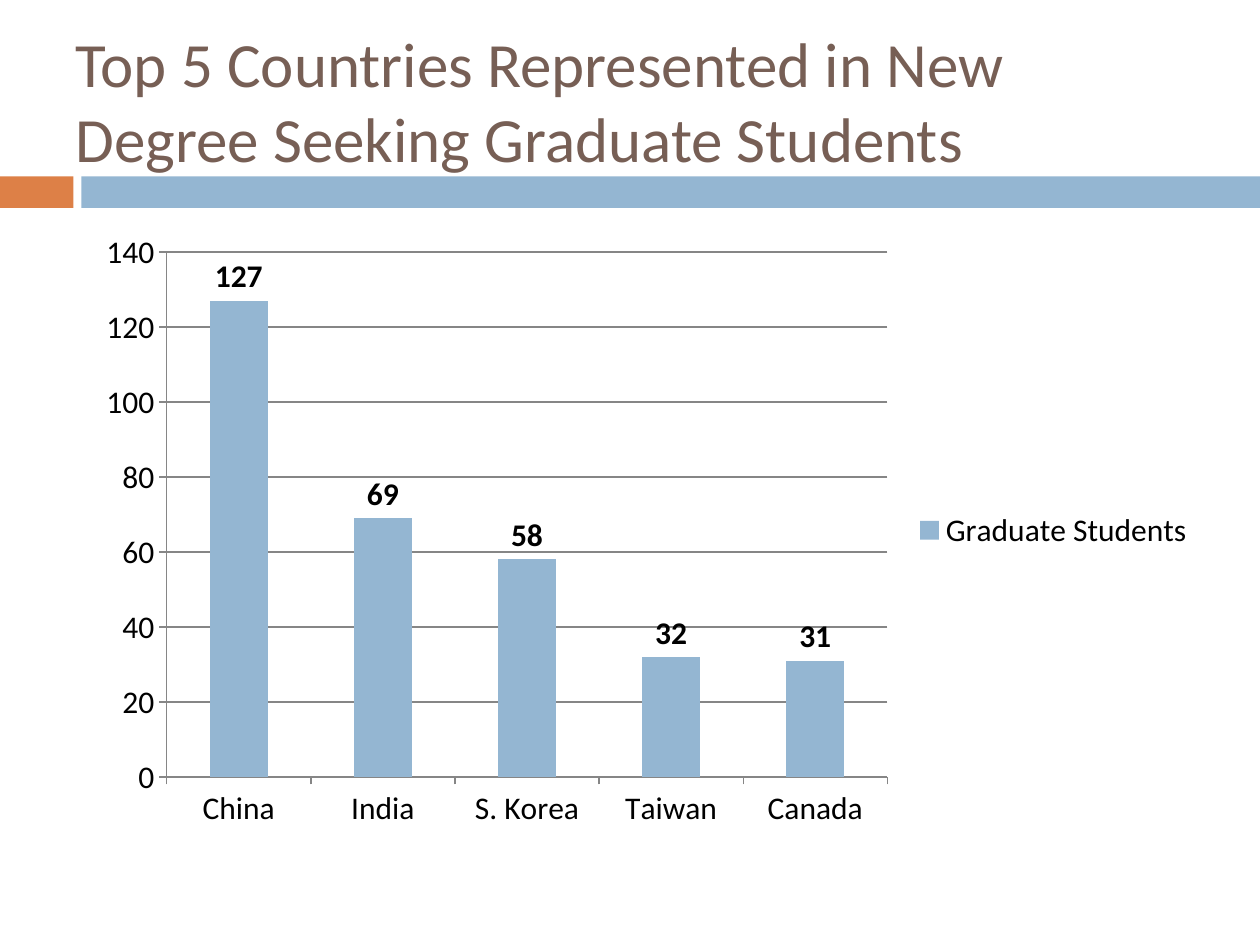
from dataclasses import dataclass

from pptx import Presentation
from pptx.chart import data
from pptx.dml.color import RGBColor
from pptx.enum import chart as ch, shapes, text
from pptx.util import Pt

BLUE = RGBColor(0x94, 0xB6, 0xD2)
RUST = RGBColor(0xDD, 0x80, 0x47)
BROWN = RGBColor(0x77, 0x5F, 0x55)
GRAY = RGBColor(0x86, 0x86, 0x86)
BLACK = RGBColor(0, 0, 0)
FONT = "Calibri"


@dataclass
class Band:
    left: float
    width: float
    fill: RGBColor


BANDS = [Band(0, 42, RUST), Band(46.5, 673.5, BLUE)]
COUNTS = {"China": 127, "India": 69, "S. Korea": 58, "Taiwan": 32, "Canada": 31}


def style(font, size: float, color: RGBColor, bold: bool = False) -> None:
    font.name = FONT
    font.size = Pt(size)
    font.bold = bold
    font.color.rgb = color


def draw_band(slide, band: Band) -> None:
    bar = slide.shapes.add_shape(
        shapes.MSO_SHAPE.RECTANGLE, Pt(band.left), Pt(100.8), Pt(band.width), Pt(18)
    )
    bar.shadow.inherit = False
    bar.fill.solid()
    bar.fill.fore_color.rgb = band.fill
    bar.line.fill.background()


def draw_title(slide) -> None:
    title = slide.shapes.title
    title.left, title.top, title.width, title.height = Pt(36), Pt(18), Pt(654.5), Pt(78)
    frame = title.text_frame
    frame.text = "Top 5 Countries Represented in New\vDegree Seeking Graduate Students"
    frame.word_wrap = True
    frame.auto_size = text.MSO_AUTO_SIZE.NONE
    frame.vertical_anchor = text.MSO_ANCHOR.MIDDLE
    line = frame.paragraphs[0]
    line.alignment = text.PP_ALIGN.LEFT
    style(line.font, 36, BROWN)


def draw_chart(slide) -> None:
    source = data.CategoryChartData()
    source.categories = list(COUNTS)
    source.add_series("Graduate Students", list(COUNTS.values()))
    chart = slide.shapes.add_chart(
        ch.XL_CHART_TYPE.COLUMN_CLUSTERED, Pt(48), Pt(126), Pt(642), Pt(354), source
    ).chart
    style(chart.font, 18, BLACK)
    chart.has_title = False
    chart.has_legend = True
    chart.legend.position = ch.XL_LEGEND_POSITION.RIGHT
    chart.legend.include_in_layout = False

    scale = chart.value_axis
    scale.minimum_scale, scale.maximum_scale, scale.major_unit = 0, 140, 20
    scale.has_major_gridlines = True
    scale.major_gridlines.format.line.color.rgb = GRAY
    for axis in (scale, chart.category_axis):
        axis.major_tick_mark = ch.XL_TICK_MARK.OUTSIDE
        axis.format.line.color.rgb = GRAY

    plot = chart.plots[0]
    plot.gap_width = 150
    plot.vary_by_categories = False
    series = plot.series[0]
    series.format.fill.solid()
    series.format.fill.fore_color.rgb = BLUE
    labels = series.data_labels
    labels.show_value = True
    labels.position = ch.XL_LABEL_POSITION.OUTSIDE_END
    style(labels.font, 18, BLACK, bold=True)


def main() -> None:
    deck = Presentation()
    deck.slide_width, deck.slide_height = Pt(720), Pt(540)
    slide = deck.slides.add_slide(deck.slide_layouts[5])
    for band in BANDS:
        draw_band(slide, band)
    draw_title(slide)
    draw_chart(slide)
    deck.save("out.pptx")


if __name__ == "__main__":
    main()
